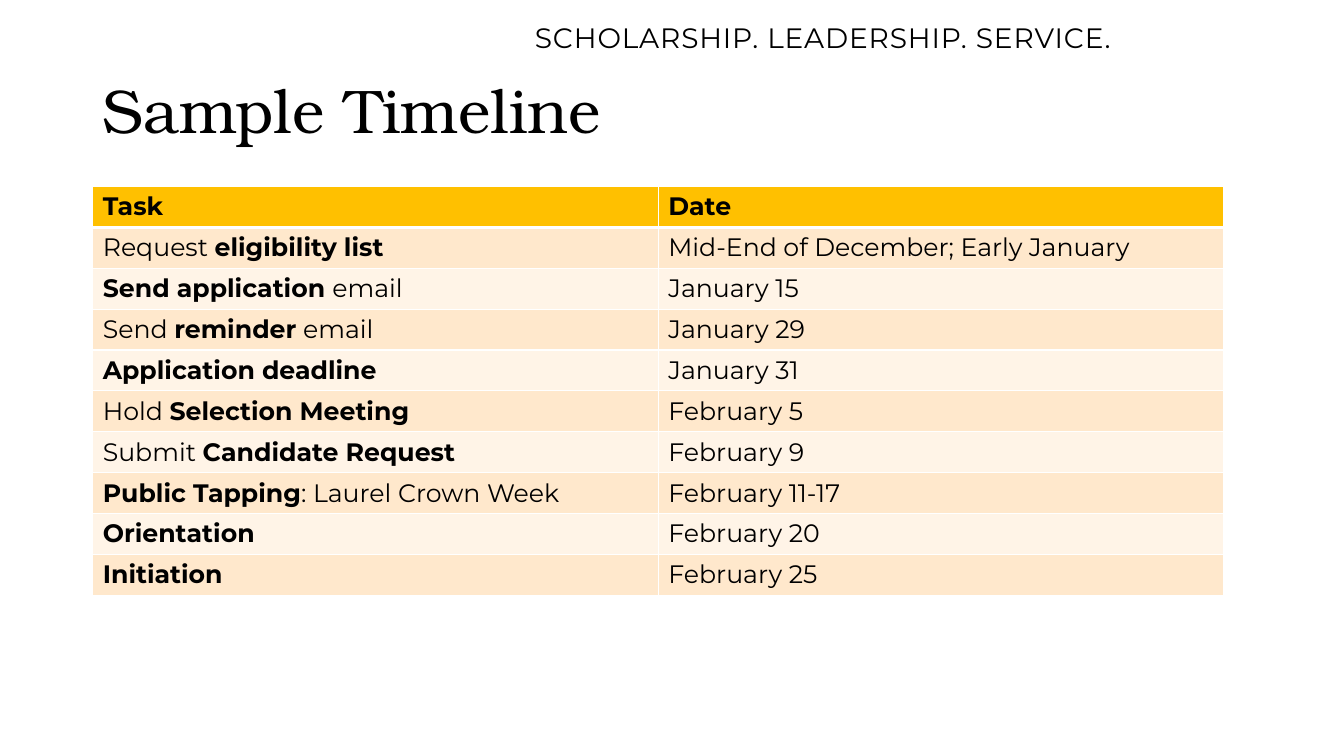
from lxml.etree import SubElement
from pptx import Presentation
from pptx.dml.color import RGBColor
from pptx.enum.text import MSO_ANCHOR, PP_ALIGN
from pptx.oxml.ns import qn
from pptx.util import Pt

MOTTO = "SCHOLARSHIP. LEADERSHIP. SERVICE."
TITLE = "Sample Timeline"
# Text between double asterisks is bold.
ROWS = [
    ("**Task**", "**Date**"),
    ("Request **eligibility list**", "Mid-End of December; Early January"),
    ("**Send application **email", "January 15"),
    ("Send **reminder** email", "January 29"),
    ("**Application deadline**", "January 31"),
    ("Hold **Selection Meeting**", "February 5"),
    ("Submit **Candidate Request**", "February 9"),
    ("**Public Tapping**: Laurel Crown Week", "February 11-17"),
    ("**Orientation**", "February 20"),
    ("**Initiation**", "February 25"),
]

BLACK = RGBColor(0x00, 0x00, 0x00)
WHITE = RGBColor(0xFF, 0xFF, 0xFF)
GOLD = RGBColor(0xFF, 0xC0, 0x00)
BANDS = [RGBColor(0xFF, 0xF4, 0xE7), RGBColor(0xFF, 0xE8, 0xCC)]
BODY_FONT = "Montserrat"
TITLE_FONT = "TeX Gyre Bonum"

LEFT = 66.24
TABLE_TOP, TABLE_WIDTH, ROW_HEIGHT = 133.2, 808, 29.2


def set_font(paragraph, name, size):
    paragraph.font.name = name
    paragraph.font.size = Pt(size)
    paragraph.font.color.rgb = BLACK


def add_marked_text(paragraph, text):
    """Add runs to the paragraph, bold between double asterisks."""
    for index, part in enumerate(text.split("**")):
        if part:
            run = paragraph.add_run()
            run.text = part
            run.font.bold = index % 2 == 1


def set_borders(cell, top, bottom):
    """Draw white borders; top and bottom are widths in points."""
    properties = cell._tc.get_or_add_tcPr()
    widths = {"a:lnL": 1, "a:lnR": 1, "a:lnT": top, "a:lnB": bottom}
    for tag, width in widths.items():
        line = SubElement(properties, qn(tag), w=str(Pt(width)))
        fill = SubElement(line, qn("a:solidFill"))
        SubElement(fill, qn("a:srgbClr"), val=str(WHITE))


presentation = Presentation()
presentation.slide_width = Pt(960)
presentation.slide_height = Pt(540)
slide = presentation.slides.add_slide(presentation.slide_layouts[5])

motto_box = slide.shapes.add_textbox(Pt(375), Pt(10.8), Pt(440), Pt(31.5))
motto_box.text_frame.word_wrap = True
motto = motto_box.text_frame.paragraphs[0]
motto.text = MOTTO
set_font(motto, BODY_FONT, 20)
motto.runs[0].font._element.set("spc", "60")

title = slide.shapes.title
title.left, title.top, title.width, title.height = Pt(LEFT), Pt(28.8), Pt(828), Pt(104.4)
title.text_frame.text = TITLE
title.text_frame.vertical_anchor = MSO_ANCHOR.MIDDLE
heading = title.text_frame.paragraphs[0]
heading.alignment = PP_ALIGN.LEFT
heading.line_spacing = 0.9
set_font(heading, TITLE_FONT, 44)

table = slide.shapes.add_table(
    len(ROWS), 2, Pt(LEFT), Pt(TABLE_TOP), Pt(TABLE_WIDTH), Pt(ROW_HEIGHT * len(ROWS))
).table
for row_index, row in enumerate(ROWS):
    for column_index, text in enumerate(row):
        cell = table.cell(row_index, column_index)
        set_borders(cell, 3 if row_index == 1 else 1, 3 if row_index == 0 else 1)
        cell.fill.solid()
        cell.fill.fore_color.rgb = BANDS[row_index % 2] if row_index else GOLD
        paragraph = cell.text_frame.paragraphs[0]
        add_marked_text(paragraph, text)
        # Table styles override paragraph defaults, so runs carry the font.
        for run in paragraph.runs:
            set_font(run, BODY_FONT, 18)

presentation.save("out.pptx")
